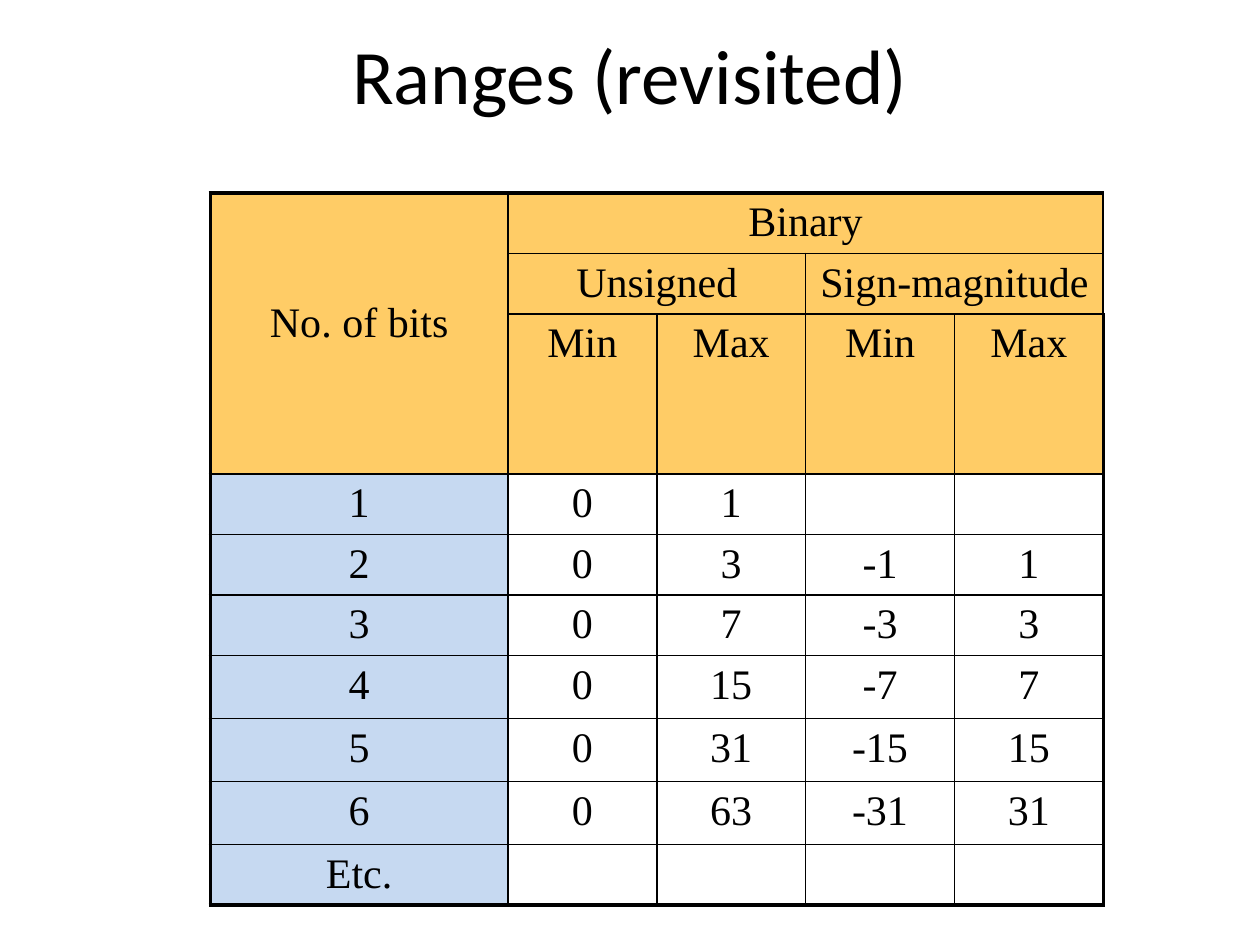
from dataclasses import dataclass

from lxml.etree import SubElement
from pptx import Presentation
from pptx.dml.color import RGBColor
from pptx.enum.text import MSO_ANCHOR, PP_ALIGN
from pptx.oxml.ns import qn
from pptx.util import Cm, Pt


@dataclass(frozen=True)
class Theme:
    ink: str = "000000"
    header: str = "FFCC66"
    stub: str = "C6D9F1"
    title_font: str = "Calibri"
    table_font: str = "Times New Roman"
    title_size: float = 44
    table_size: float = 24
    inner_line: float = 1
    outer_line: float = 2.25


class Page:
    """Holds the theme and the current slide."""

    def __init__(self, deck, theme):
        self.theme = theme
        self.slide = deck.slides.add_slide(deck.slide_layouts[5])

    def set_text(self, frame, text, font_name, size):
        para = frame.paragraphs[0]
        para.text = text
        para.alignment = PP_ALIGN.CENTER
        para.font.name = font_name
        para.font.size = Pt(size)
        para.font.color.rgb = RGBColor.from_string(self.theme.ink)

    def title(self, text, left, top, width, height):
        box = self.slide.shapes.title
        box.left, box.top, box.width, box.height = map(Cm, (left, top, width, height))
        box.text_frame.vertical_anchor = MSO_ANCHOR.MIDDLE
        self.set_text(box.text_frame, text, self.theme.title_font, self.theme.title_size)

    def border(self, cell, side, points):
        properties = cell._tc.get_or_add_tcPr()
        line = SubElement(properties, qn(f"a:ln{side}"), w=str(Pt(points)))
        fill = SubElement(line, qn("a:solidFill"))
        SubElement(fill, qn("a:srgbClr"), val=self.theme.ink)

    def table(self, rows, left, top, widths, heights, header_rows, merges):
        theme = self.theme
        last_row, last_column = len(rows) - 1, len(widths) - 1
        frame = self.slide.shapes.add_table(
            len(rows), len(widths), Cm(left), Cm(top), Cm(sum(widths)), Cm(sum(heights)))
        table = frame.table
        table.first_row = table.horz_banding = False
        for column, width in zip(table.columns, widths):
            column.width = Cm(width)
        for row, height in zip(table.rows, heights):
            row.height = Cm(height)

        for r, values in enumerate(rows):
            for c, text in enumerate(values):
                cell = table.cell(r, c)
                # Thick frame outside, thin grid inside
                edges = {"L": c == 0, "R": c == last_column,
                         "T": r == 0, "B": r == last_row}
                for side, outside in edges.items():
                    self.border(cell, side, theme.outer_line if outside else theme.inner_line)
                # Header and first column are coloured
                if r < header_rows or c == 0:
                    color = theme.header if r < header_rows else theme.stub
                    cell.fill.solid()
                    cell.fill.fore_color.rgb = RGBColor.from_string(color)
                else:
                    cell.fill.background()
                self.set_text(cell.text_frame, text, theme.table_font, theme.table_size)

        for first, last in merges:
            table.cell(*first).merge(table.cell(*last))
        return table


def main():
    deck = Presentation()
    deck.slide_width, deck.slide_height = Cm(25.4), Cm(19.05)
    page = Page(deck, Theme())
    page.title("Ranges (revisited)", 1.9, 0.43, 21.6, 2.11)

    # Header rows, ranges by number of bits, closing row
    rows = [
        ["No. of bits", "Binary", "", "", ""],
        ["", "Unsigned", "", "Sign-magnitude", ""],
        ["", "Min", "Max", "Min", "Max"],
        ["1", "0", "1", "", ""],
    ]
    for bits in range(2, 7):
        signed = 2 ** (bits - 1) - 1
        rows.append([str(n) for n in (bits, 0, 2 ** bits - 1, -signed, signed)])
    rows.append(["Etc.", "", "", "", ""])

    table = page.table(
        rows, left=4.24, top=3.89,
        widths=[6] + [3] * 4,
        heights=[1.22] * 6 + [1.27] * 3 + [1.22],
        header_rows=3,
        merges=[((0, 0), (2, 0)), ((0, 1), (0, 4)),
                ((1, 1), (1, 2)), ((1, 3), (1, 4))])
    # The row label sits low in its tall cell
    table.cell(0, 0).margin_top = Cm(2.16)

    deck.save("out.pptx")


if __name__ == "__main__":
    main()
